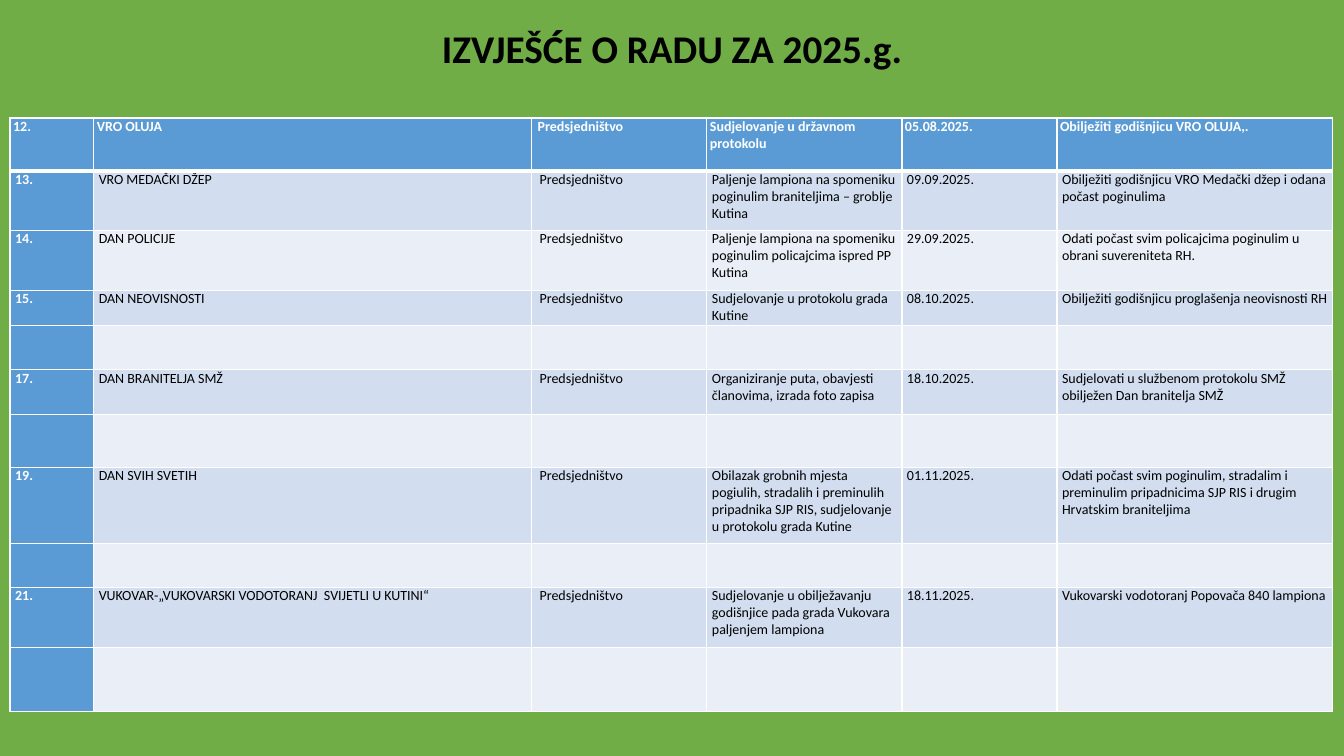
from dataclasses import dataclass

from lxml.etree import SubElement
from pptx import Presentation
from pptx.dml.color import RGBColor
from pptx.enum.text import MSO_ANCHOR, MSO_AUTO_SIZE, PP_ALIGN
from pptx.oxml.ns import qn
from pptx.slide import Slide
from pptx.table import Table, _Cell
from pptx.util import Pt

GREEN = RGBColor(0x70, 0xAD, 0x47)
BLUE = RGBColor(0x5B, 0x9B, 0xD5)
BAND_DARK = RGBColor(0xD2, 0xDE, 0xEF)
BAND_LIGHT = RGBColor(0xEA, 0xEF, 0xF7)
WHITE = RGBColor(0xFF, 0xFF, 0xFF)
BLACK = RGBColor(0, 0, 0)
FONT = "Calibri"
ORGANISER = " Predsjedništvo"
COLUMN_WIDTHS = (59.76, 312.7, 125.3, 139.3, 110.8, 197)


@dataclass(frozen=True)
class Activity:
    height: float
    number: str = ""
    name: str = ""
    task: str = ""
    date: str = ""
    goal: str = ""

    def texts(self) -> tuple[str, ...]:
        organiser = ORGANISER if self.name else ""
        return (self.number, self.name, organiser, self.task, self.date, self.goal)


ACTIVITIES = (
    Activity(38, "12.", "VRO OLUJA", "Sudjelovanje u državnom protokolu",
             "05.08.2025.", "Obilježiti godišnjicu VRO OLUJA,."),
    Activity(42.5, "13.", "VRO MEDAČKI DŽEP",
             "Paljenje lampiona na spomeniku poginulim braniteljima – groblje Kutina",
             "09.09.2025.",
             "Obilježiti godišnjicu VRO Medački džep i odana počast poginulima"),
    Activity(42.5, "14.", "DAN POLICIJE",
             "Paljenje lampiona na spomeniku poginulim policajcima ispred PP Kutina",
             "29.09.2025.",
             "Odati počast svim policajcima poginulim u obrani suvereniteta RH."),
    Activity(25.2, "15.", "DAN NEOVISNOSTI", "Sudjelovanje u protokolu grada Kutine",
             "08.10.2025.", "Obilježiti godišnjicu proglašenja neovisnosti RH"),
    Activity(31.7),
    Activity(31.7, "17.", "DAN BRANITELJA SMŽ",
             "Organiziranje puta, obavjesti članovima, izrada foto zapisa",
             "18.10.2025.",
             "Sudjelovati u službenom protokolu SMŽ obilježen Dan branitelja SMŽ"),
    Activity(38.2),
    Activity(54, "19.", "DAN SVIH SVETIH",
             "Obilazak grobnih mjesta pogiulih, stradalih i preminulih pripadnika "
             "SJP RIS, sudjelovanje u protokolu grada Kutine",
             "01.11.2025.",
             "Odati počast svim poginulim, stradalim i preminulim pripadnicima "
             "SJP RIS i drugim Hrvatskim braniteljima"),
    Activity(31.7),
    Activity(42.5, "21.", "VUKOVAR-„VUKOVARSKI VODOTORANJ  SVIJETLI U KUTINI“",
             "Sudjelovanje u obilježavanju godišnjice pada grada Vukovara "
             "paljenjem lampiona",
             "18.11.2025.", "Vukovarski vodotoranj Popovača 840 lampiona"),
    Activity(46),
)


def set_all(target: object, values: dict[str, object]) -> None:
    for name, value in values.items():
        setattr(target, name, value)


def set_borders(cell: _Cell, top: float, bottom: float) -> None:
    """Give the cell white borders, 1 pt wide at the sides."""
    properties = cell._tc.get_or_add_tcPr()
    widths = {"a:lnL": 1, "a:lnR": 1, "a:lnT": top, "a:lnB": bottom}
    for position, (tag, width) in enumerate(widths.items()):
        line = SubElement(properties, qn(tag), w=str(Pt(width)))
        SubElement(SubElement(line, qn("a:solidFill")), qn("a:srgbClr"), val=str(WHITE))
        properties.insert(position, line)


def fill_cell(cell: _Cell, text: str, row: int, column: int) -> None:
    header = row == 0
    accent = header or column == 0
    inset = Pt(2.2 if header else 3.6)
    set_all(cell, {"margin_left": inset, "margin_right": inset,
                   "margin_top": 0, "margin_bottom": 0})
    cell.fill.solid()
    band = BAND_DARK if row % 2 else BAND_LIGHT
    cell.fill.fore_color.rgb = BLUE if accent else band
    set_borders(cell, top=3 if row == 1 else 1, bottom=3 if header else 1)
    para = cell.text_frame.paragraphs[0]
    para.font.size = Pt(10)
    if text:
        span = para.add_run()
        span.text = text
        set_all(span.font, {"name": FONT, "size": Pt(10), "bold": accent})
        span.font.color.rgb = WHITE if accent else BLACK


def fill_table(table: Table) -> None:
    set_all(table, {"first_row": True, "first_col": True, "horz_banding": True})
    for column, width in zip(table.columns, COLUMN_WIDTHS):
        column.width = Pt(width)
    for row, activity in enumerate(ACTIVITIES):
        table.rows[row].height = Pt(activity.height)
        for column, text in enumerate(activity.texts()):
            fill_cell(table.cell(row, column), text, row, column)


def add_title(page: Slide) -> None:
    title = page.shapes.title
    set_all(title, {"left": Pt(66), "top": Pt(11), "width": Pt(828), "height": Pt(50)})
    frame = title.text_frame
    set_all(frame, {"word_wrap": True, "auto_size": MSO_AUTO_SIZE.NONE,
                    "vertical_anchor": MSO_ANCHOR.MIDDLE})
    para = frame.paragraphs[0]
    set_all(para, {"alignment": PP_ALIGN.CENTER, "line_spacing": 0.9})
    span = para.add_run()
    span.text = "IZVJEŠĆE O RADU ZA 2025.g."
    set_all(span.font, {"name": FONT, "size": Pt(28), "bold": True})
    span.font.color.rgb = BLACK


def main() -> None:
    deck = Presentation()
    set_all(deck, {"slide_width": Pt(960), "slide_height": Pt(540)})
    page = deck.slides.add_slide(deck.slide_layouts[5])
    page.background.fill.solid()
    page.background.fill.fore_color.rgb = GREEN
    add_title(page)
    frame = page.shapes.add_table(
        len(ACTIVITIES), len(COLUMN_WIDTHS), Pt(7.2), Pt(84.3),
        Pt(sum(COLUMN_WIDTHS)), Pt(sum(activity.height for activity in ACTIVITIES)))
    fill_table(frame.table)
    deck.save("out.pptx")


if __name__ == "__main__":
    main()
